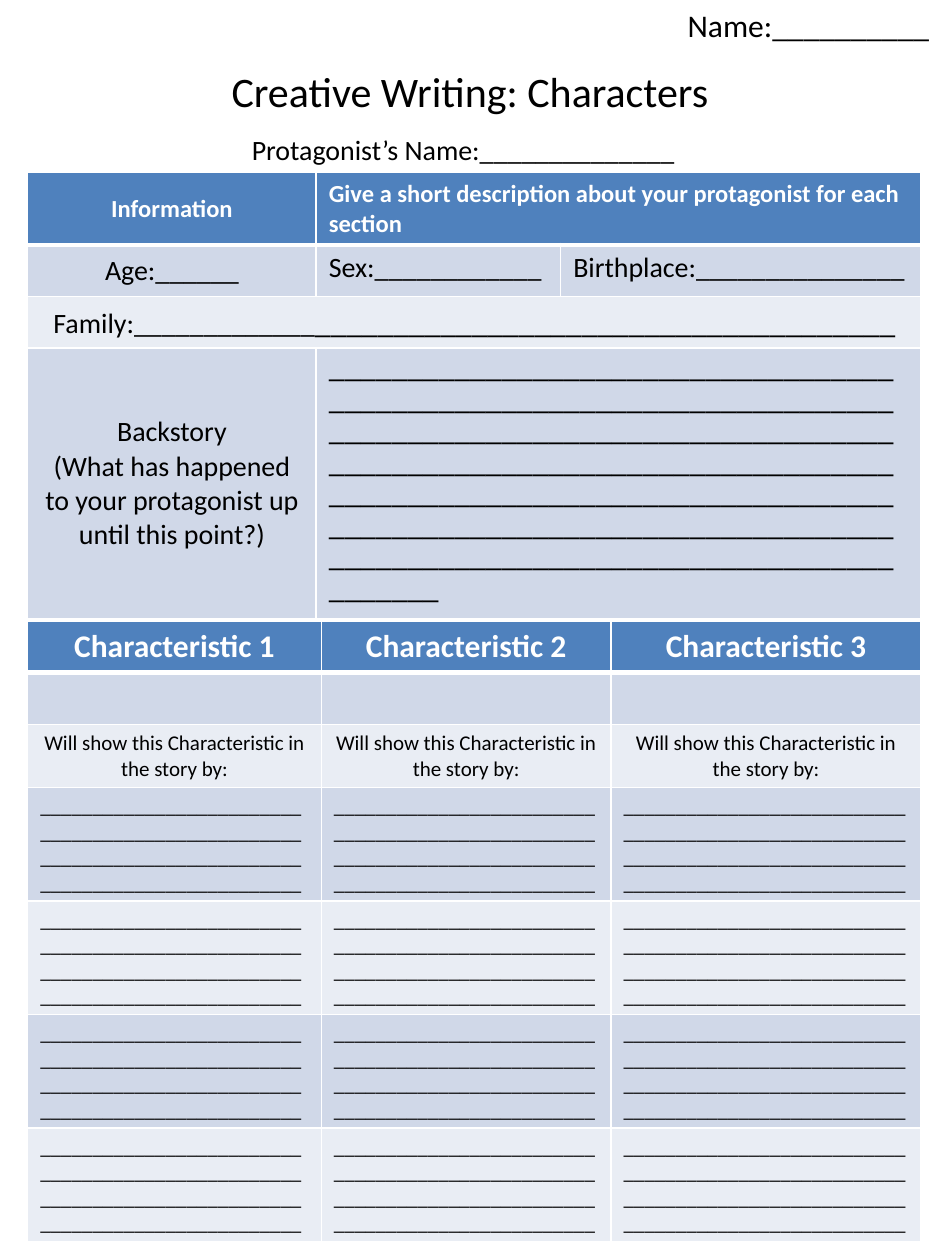
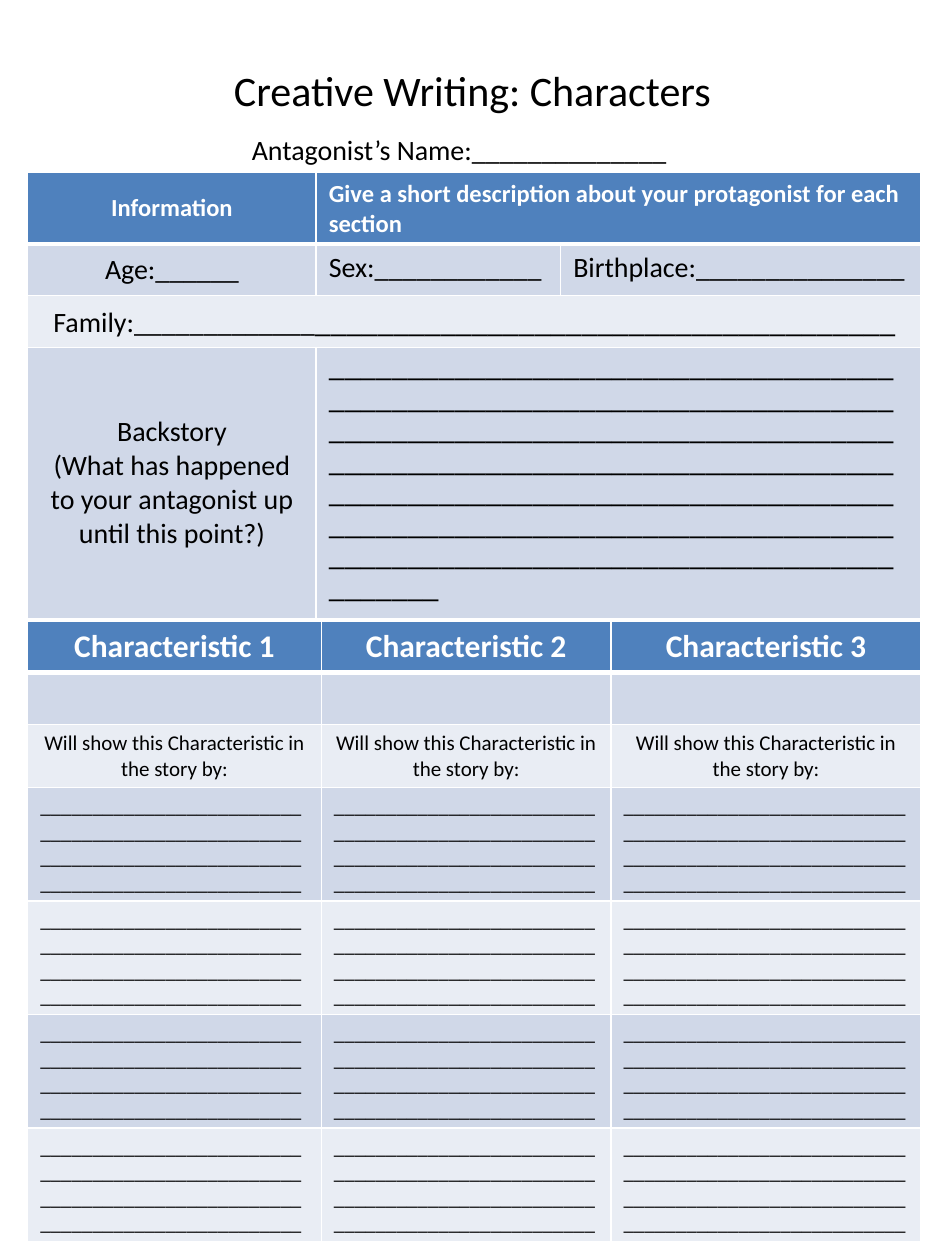
from dataclasses import dataclass

from lxml import etree
from pptx import Presentation
from pptx.dml.color import RGBColor
from pptx.enum.text import MSO_ANCHOR, MSO_AUTO_SIZE, PP_ALIGN
from pptx.oxml.ns import qn
from pptx.util import Inches, Pt

LEFT, CENTER = PP_ALIGN.LEFT, PP_ALIGN.CENTER
TOP, MIDDLE = MSO_ANCHOR.TOP, MSO_ANCHOR.MIDDLE
GROW = MSO_AUTO_SIZE.SHAPE_TO_FIT_TEXT

FONT = "Calibri"
BLACK, WHITE, BLUE = "000000", "FFFFFF", "4F81BD"
BANDS = ("E9EDF4", "D0D8E8")
EDGES = ("lnL", "lnR", "lnT", "lnB")
THIN, THICK = 1, 3


@dataclass(frozen=True)
class Entry:
    """One table cell: its text, style, span and line pitch in points."""
    text: str = ""
    size: int = 18
    align: PP_ALIGN = LEFT
    anchor: MSO_ANCHOR = TOP
    span: int = 1
    tail: str = ""
    pitch: int = 0


@dataclass(frozen=True)
class Grid:
    """One table: its top, columns, rows and entries."""
    top: float
    height: float
    cols: tuple[float, ...]
    rows: tuple[float, ...]
    cells: list[list[Entry]]


@dataclass(frozen=True)
class Label:
    """One line of text on the page."""
    text: str
    left: float
    top: float
    width: float
    height: float
    size: int
    title: bool = False


def color(code: str) -> RGBColor:
    """Turn a hex string into a colour."""
    return RGBColor.from_string(code)


def style(frame, size: int, code: str, align: PP_ALIGN, bold: bool = False) -> None:
    """Format every run of a text frame."""
    for para in frame.paragraphs:
        para.alignment = align
        for run in para.runs:
            font = run.font
            font.name, font.size, font.bold = FONT, Pt(size), bold
            font.color.rgb = color(code)


def border(cell, row: int) -> None:
    """Draw white cell edges, thick below the header."""
    props = cell._tc.get_or_add_tcPr()
    for spot, edge in enumerate(EDGES):
        heavy = (row, edge) in ((0, "lnB"), (1, "lnT"))
        line = etree.Element(qn(f"a:{edge}"), w=str(Pt(THICK if heavy else THIN)))
        fill = etree.SubElement(line, qn("a:solidFill"))
        etree.SubElement(fill, qn("a:srgbClr"), val=WHITE)
        props.insert(spot, line)


def draw_cell(cell, entry: Entry, head: bool) -> None:
    """Write and format the text of one cell."""
    frame = cell.text_frame
    frame.text = entry.text
    cell.vertical_anchor = entry.anchor
    style(frame, entry.size, WHITE if head else BLACK, entry.align, head)
    if entry.pitch:
        frame.paragraphs[0].line_spacing = Pt(entry.pitch)
    if entry.tail:
        run = frame.paragraphs[0].add_run()
        run.text = entry.tail
        run.font.name, run.font.size, run.font.bold = FONT, Pt(18), False
        run.font.color.rgb = color(BLACK)


def draw_grid(slide, grid: Grid) -> None:
    """Draw one banded table."""
    shape = slide.shapes.add_table(len(grid.rows), len(grid.cols), Inches(0.22),
                                   Inches(grid.top), Inches(7.1), Inches(grid.height))
    table = shape.table
    for col, width in zip(table.columns, grid.cols):
        col.width = Inches(width)
    for row, height in zip(table.rows, grid.rows):
        row.height = Inches(height)
    shape.height = Inches(grid.height)
    for r, line in enumerate(grid.cells):
        for c in range(len(grid.cols)):
            cell = table.cell(r, c)
            cell.fill.solid()
            cell.fill.fore_color.rgb = color(BANDS[r % 2] if r else BLUE)
            border(cell, r)
        c = 0
        for entry in line:
            cell = table.cell(r, c)
            if entry.span > 1:
                cell.merge(table.cell(r, c + entry.span - 1))
            draw_cell(cell, entry, r == 0)
            c += entry.span


def draw_label(slide, label: Label) -> None:
    """Draw one label, centred when it is the title."""
    box = slide.shapes.add_textbox(Inches(label.left), Inches(label.top),
                                   Inches(label.width), Inches(label.height))
    frame = box.text_frame
    frame.text = label.text
    frame.word_wrap = label.title
    if label.title:
        frame.vertical_anchor = MIDDLE
    else:
        frame.auto_size = GROW
    style(frame, label.size, BLACK, CENTER if label.title else LEFT)


def facts(role: str) -> Grid:
    """Describe the table of facts about a character."""
    ask = f"Backstory\n(What has happened to your {role} up until this point?)"
    return Grid(1.37, 3.53, (2.29, 1.94, 2.86), (0.56, 0.41, 0.41, 2.15), [
        [Entry("Information", 14, CENTER, MIDDLE),
         Entry("Give a short description about your protagonist for each section",
               14, anchor=MIDDLE, span=2)],
        [Entry("Age:" + "_" * 6, 16, CENTER, MIDDLE),
         Entry("Sex:" + "_" * 12, 16), Entry("Birthplace:" + "_" * 15, 16)],
        [Entry("Family:" + "_" * 13, 16, CENTER, MIDDLE, 3, "_" * 37)],
        [Entry(ask, 16, CENTER, MIDDLE), Entry("_" * 259, span=2, pitch=18)],
    ])


def traits() -> Grid:
    """Describe the table of characteristics."""
    heads = [Entry(f"Characteristic {n}", 18, CENTER) for n in (1, 2, 3)]
    prompt = Entry("Will show this Characteristic in the story by:", 12, CENTER)
    blanks = [Entry("_" * count, 12) for count in (100, 100, 108)]
    return Grid(4.93, 4.91, (2.33, 2.3, 2.46), (0.41,) * 7,
                [heads, [Entry()] * 3, [prompt] * 3] + [blanks] * 4)


def title(left: float, top: float) -> Label:
    """Describe the page title."""
    return Label("Creative Writing: Characters", left, top, 6.38, 0.64, 24, True)


def who(role: str, width: float) -> Label:
    """Describe the line for the character's name."""
    return Label(f"{role.title()}’s Name:" + "_" * 14, 1.9, 1, width, 0.37, 16)


def main() -> None:
    """Build both worksheets and save them."""
    deck = Presentation()
    deck.slide_width, deck.slide_height = Inches(7.5), Inches(10)
    pupil = Label("Name:" + "_" * 10, 5.36, 0, 2.14, 0.4, 18)
    pages = [
        [facts("protagonist"), title(0.54, 0.4), pupil, traits(), who("protagonist", 3.62)],
        [title(0.56, 0.39), traits(), who("antagonist", 3.66), facts("antagonist")],
    ]
    for parts in pages:
        slide = deck.slides.add_slide(deck.slide_layouts[6])
        for part in parts:
            if isinstance(part, Grid):
                draw_grid(slide, part)
            else:
                draw_label(slide, part)
    deck.save("out.pptx")


if __name__ == "__main__":
    main()
